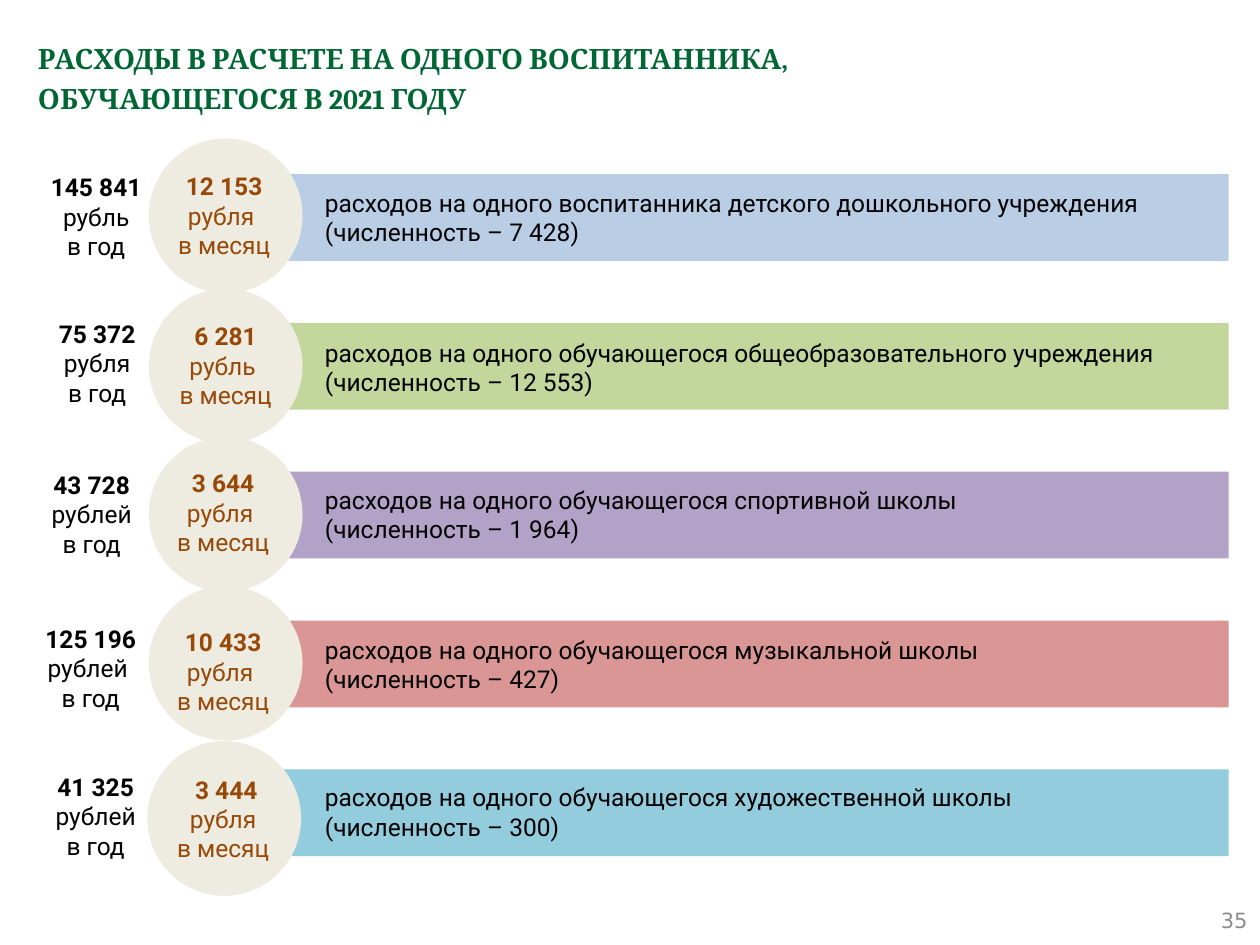
import dataclasses

import pptx
import pptx.dml.color
import pptx.enum.shapes
import pptx.enum.text
import pptx.util

Cm = pptx.util.Cm
SHAPES = pptx.enum.shapes.MSO_SHAPE
ALIGN = pptx.enum.text.PP_ALIGN
ANCHOR = pptx.enum.text.MSO_ANCHOR


@dataclasses.dataclass(frozen=True)
class Theme:
    heading_font: str = "Cambria"
    body_font: str = "Roboto"
    number_font: str = "DejaVu Sans"
    heading_size: int = 16
    body_size: int = 14
    number_size: int = 12
    heading: str = "006633"
    body: str = "000000"
    monthly: str = "984807"
    number: str = "8C8C8C"
    circle: str = "EEECE1"
    bars: tuple = ("B9CDE5", "C3D69B", "B3A2C7", "D99694", "93CDDD")


@dataclasses.dataclass
class Expense:
    yearly: tuple
    yearly_center: float
    yearly_top: float
    monthly: tuple
    monthly_center: float
    monthly_top: float
    purpose: tuple
    purpose_top: float
    circle_left: float
    circle_top: float


EXPENSES = [
    Expense(("145 841", "рубль", "в год"), 1.94, 3.35,
            ("12 153", "рубля ", "в месяц"), 4.52, 3.33,
            ("расходов на одного воспитанника детского дошкольного учреждения "
             "(численность – 7 428)",), 3.66, 3, 2.79),
    Expense(("75 372", "рубля", "в год"), 1.96, 6.3,
            ("6 281", "рубль ", "в месяц"), 4.55, 6.35,
            ("расходов на одного обучающегося общеобразовательного учреждения "
             "(численность – 12 553)",), 6.68, 3, 5.82),
    Expense(("43 728", "рублей", "в год"), 1.85, 9.35,
            ("3 644", "рубля ", "в месяц"), 4.5, 9.32,
            ("расходов на одного обучающегося спортивной школы",
             "(численность – 1 964)"), 9.65, 3, 8.81),
    Expense(("125 196", "рублей ", "в год"), 1.83, 12.45,
            ("10 433", "рубля ", "в месяц"), 4.5, 12.52,
            ("расходов на одного обучающегося музыкальной школы",
             "(численность – 427)"), 12.67, 3, 11.81),
    Expense(("41 325", "рублей", "в год"), 1.93, 15.44,
            (" 3 444", "рубля", "в месяц"), 4.5, 15.49,
            ("расходов на одного обучающегося художественной школы",
             "(численность – 300)"), 15.65, 2.97, 14.94),
]


def write(frame, lines, *, font, size, color, align=ALIGN.LEFT,
          anchor=ANCHOR.TOP, bold=False, bold_first=False, spacing=None):
    frame.word_wrap = True
    frame.vertical_anchor = anchor
    frame.text = "\n".join(lines)
    for index, paragraph in enumerate(frame.paragraphs):
        paragraph.alignment = align
        paragraph.line_spacing = spacing
        for run in paragraph.runs:
            run.font.name = font
            run.font.size = pptx.util.Pt(size)
            run.font.bold = bold or (bold_first and index == 0)
            run.font.color.rgb = pptx.dml.color.RGBColor.from_string(color)


class SlideBuilder:
    """Draws themed elements on the current slide."""

    def __init__(self, slide, theme):
        self.slide = slide
        self.theme = theme

    def title(self, text, left, top, width, height):
        heading = self.slide.shapes.title
        heading.left, heading.top = Cm(left), Cm(top)
        heading.width, heading.height = Cm(width), Cm(height)
        write(heading.text_frame, [text], font=self.theme.heading_font,
              size=self.theme.heading_size, color=self.theme.heading,
              anchor=ANCHOR.MIDDLE, bold=True, spacing=1.2)

    def shape(self, kind, left, top, width, height, color):
        figure = self.slide.shapes.add_shape(
            kind, Cm(left), Cm(top), Cm(width), Cm(height))
        figure.shadow.inherit = False
        figure.fill.solid()
        figure.fill.fore_color.rgb = pptx.dml.color.RGBColor.from_string(color)
        figure.line.fill.background()

    def text(self, lines, left, top, width, height, **style):
        box = self.slide.shapes.add_textbox(
            Cm(left), Cm(top), Cm(width), Cm(height))
        defaults = dict(font=self.theme.body_font, size=self.theme.body_size,
                        color=self.theme.body)
        write(box.text_frame, lines, **(defaults | style))

    def amount(self, lines, center, top, color):
        width = 2.8
        self.text(lines, center - width / 2, top, width, 2.06, color=color,
                  align=ALIGN.CENTER, bold_first=True)


def main():
    deck = pptx.Presentation()
    deck.slide_width, deck.slide_height = Cm(25.4), Cm(19.05)
    theme = Theme()
    builder = SlideBuilder(deck.slides.add_slide(deck.slide_layouts[5]), theme)

    builder.title("РАСХОДЫ В РАСЧЕТЕ НА ОДНОГО ВОСПИТАННИКА, \v"
                  "ОБУЧАЮЩЕГОСЯ В 2021 ГОДУ", 0.51, 0.51, 24.41, 2.01)
    builder.text(["35"], 19.48, 18.03, 5.92, 1.02, font=theme.number_font,
                 size=theme.number_size, color=theme.number,
                 align=ALIGN.RIGHT, anchor=ANCHOR.MIDDLE)

    first_bar, bar_pitch = 3.51, 3
    for row, (expense, color) in enumerate(zip(EXPENSES, theme.bars)):
        builder.shape(SHAPES.RECTANGLE, 5.49, first_bar + row * bar_pitch,
                      19.28, 1.75, color)
        builder.shape(SHAPES.OVAL, expense.circle_left, expense.circle_top,
                      3.1, 3.12, theme.circle)
        builder.amount(expense.yearly, expense.yearly_center,
                       expense.yearly_top, theme.body)
        builder.amount(expense.monthly, expense.monthly_center,
                       expense.monthly_top, theme.monthly)
        builder.text(expense.purpose, 6.3, expense.purpose_top, 18.55, 1.45)

    deck.save("out.pptx")


if __name__ == "__main__":
    main()
